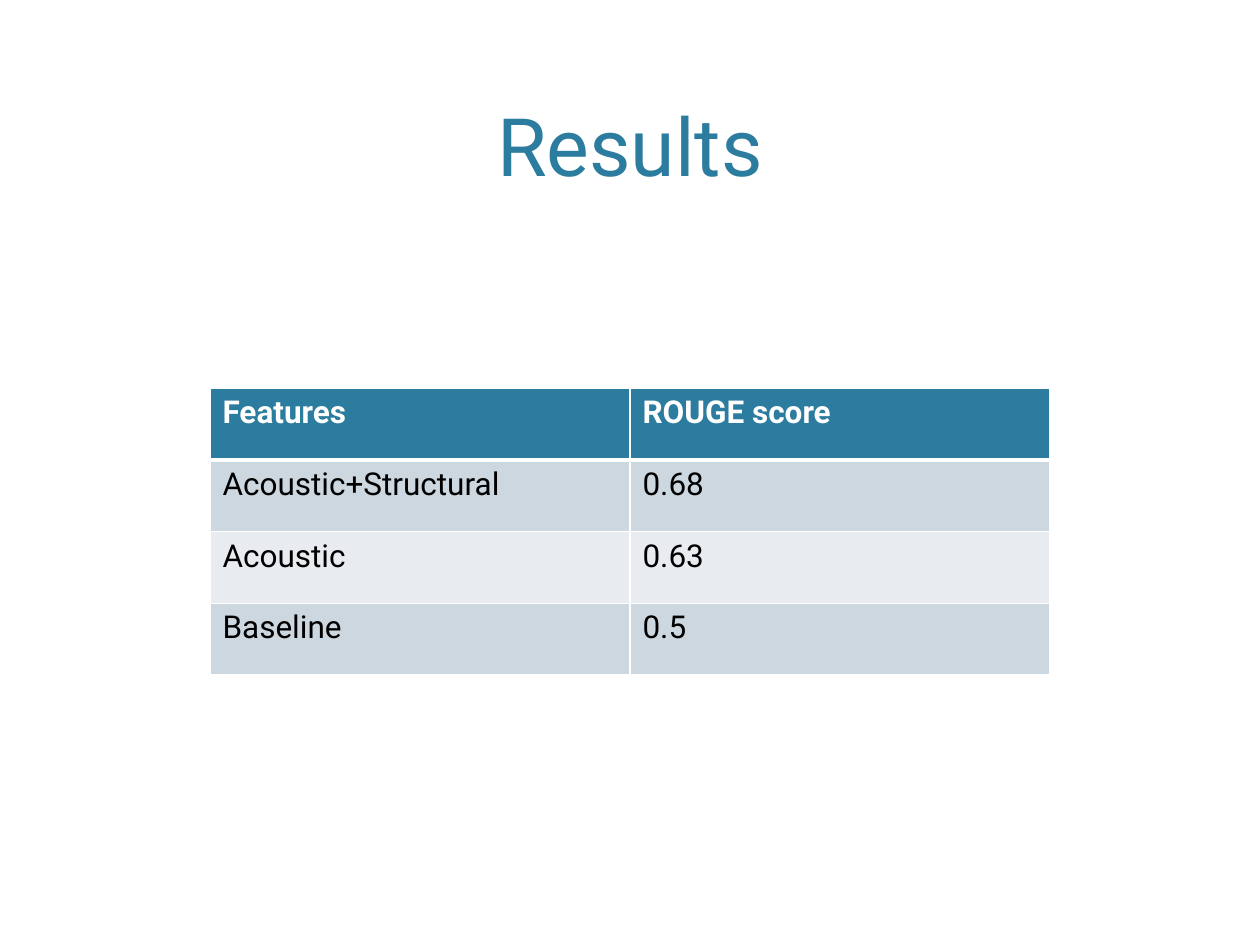
from lxml.etree import SubElement
from pptx import Presentation
from pptx.dml.color import RGBColor
from pptx.enum.text import MSO_ANCHOR as Anchor, PP_ALIGN as Align
from pptx.oxml.ns import qn
from pptx.util import Inches, Pt

FONT = "Roboto"
TEAL, WHITE, BLACK = "2C7C9F", "FFFFFF", "000000"
BANDS = ("CDD7DF", "E8ECF0")
RESULTS = [
    ("Features", "ROUGE score"),
    ("Acoustic+Structural", "0.68"),
    ("Acoustic", "0.63"),
    ("Baseline", "0.5"),
]


def color(hex_value):
    return RGBColor.from_string(hex_value)


def write_text(frame, text, size=18, fill=BLACK, bold=False, align=Align.LEFT):
    paragraph = frame.paragraphs[0]
    paragraph.alignment = align
    run = paragraph.add_run()
    run.text = text
    run.font.name = FONT
    run.font.size = Pt(size)
    run.font.bold = bold
    run.font.color.rgb = color(fill)


def set_borders(cell, **widths):
    properties = cell._tc.get_or_add_tcPr()
    for side in "LRTB":
        line = SubElement(properties, qn(f"a:ln{side}"), w=str(Pt(widths.get(side, 1))))
        solid = SubElement(line, qn("a:solidFill"))
        SubElement(solid, qn("a:srgbClr"), val=WHITE)


def place_title(slide, box, text):
    title = slide.shapes.title
    title.left, title.top, title.width, title.height = box
    title.text_frame.word_wrap = True
    title.text_frame.vertical_anchor = Anchor.BOTTOM
    write_text(title.text_frame, text, size=46, fill=TEAL, align=Align.CENTER)


def place_table(slide, box, rows):
    table = slide.shapes.add_table(len(rows), len(rows[0]), *box).table
    for row_index, values in enumerate(rows):
        header = row_index == 0
        background = TEAL if header else BANDS[(row_index - 1) % 2]
        for column_index, value in enumerate(values):
            cell = table.cell(row_index, column_index)
            set_borders(cell, T=3 if row_index == 1 else 1, B=3 if header else 1)
            cell.fill.solid()
            cell.fill.fore_color.rgb = color(background)
            write_text(cell.text_frame, value, fill=WHITE if header else BLACK, bold=header)


def main():
    presentation = Presentation()
    presentation.slide_width = width = Inches(10)
    presentation.slide_height = height = Inches(7.5)
    slide = presentation.slides.add_slide(presentation.slide_layouts[5])

    def share(left, top, across, down):
        return int(left * width), int(top * height), int(across * width), int(down * height)

    place_title(slide, share(0.06, 0.12 / 7.5, 0.88, 1.46 / 7.5), "Results")
    place_table(slide, share(1 / 6, 3.08 / 7.5, 2 / 3, 2.28 / 7.5), RESULTS)
    presentation.save("out.pptx")


if __name__ == "__main__":
    main()
